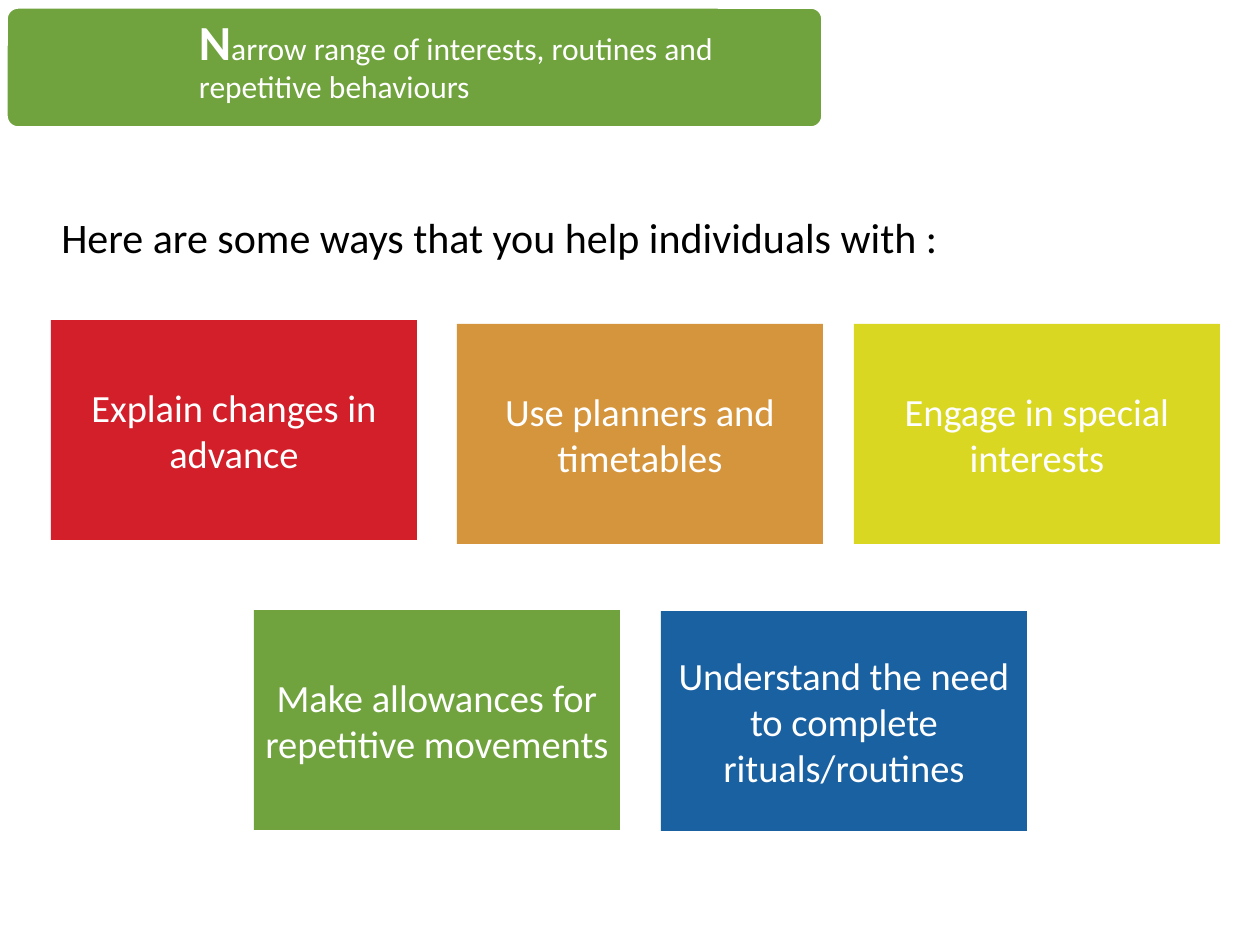
from pptx import Presentation
from pptx.dml.color import RGBColor
from pptx.enum.shapes import MSO_SHAPE
from pptx.enum.text import MSO_ANCHOR, PP_ALIGN
from pptx.util import Emu, Pt

RECT = MSO_SHAPE.RECTANGLE
ROUNDED = MSO_SHAPE.ROUNDED_RECTANGLE
MIDDLE = MSO_ANCHOR.MIDDLE
CENTER = PP_ALIGN.CENTER
PX = 914400 // 126  # 126 px to the inch
FONT = "Calibri"
COLORS = {
    "red": "D31F29",
    "orange": "D5953C",
    "yellow": "D9D721",
    "green": "70A33E",
    "blue": "1A61A2",
    "white": "FFFFFF",
    "black": "000000",
}


def box(lengths):
    return [Emu(n * PX) for n in lengths]


def style(run, size, color, bold=False):
    run.font.name = FONT
    run.font.size = Pt(size)
    run.font.bold = bold
    run.font.color.rgb = RGBColor.from_string(COLORS[color])


prs = Presentation()
prs.slide_width, prs.slide_height = box((1260, 945))
slide = prs.slides.add_slide(prs.slide_layouts[6])
shapes = slide.shapes

# Cards with the ways to help
CARD_W, CARD_H = 366, 220
cards = [
    (51, 320, "red", "Explain changes in advance"),
    (457, 324, "orange", "Use planners and timetables"),
    (854, 324, "yellow", "Engage in special interests"),
    (254, 610, "green", "Make allowances for repetitive movements"),
    (661, 611, "blue", "Understand the need to complete rituals/routines"),
]
for left, top, color, advice in cards:
    card = shapes.add_shape(RECT, *box((left, top, CARD_W, CARD_H)))
    card.shadow.inherit = False
    card.fill.solid()
    card.fill.fore_color.rgb = RGBColor.from_string(COLORS[color])
    card.line.fill.background()
    frame = card.text_frame
    frame.word_wrap = True
    frame.vertical_anchor = MIDDLE
    (frame.margin_left, frame.margin_top,
     frame.margin_right, frame.margin_bottom) = box((11, 11, 11, 11))
    frame.text = advice
    frame.paragraphs[0].alignment = CENTER
    style(frame.paragraphs[0].runs[0], 22, "white")

# Introduction line
intro = shapes.add_textbox(*box((49, 205, 1101, 63))).text_frame
intro.word_wrap = True
intro.text = "Here are some ways that you help individuals with :"
style(intro.paragraphs[0].runs[0], 24, "black")

# Banner
banner = shapes.add_shape(ROUNDED, *box((6, 7, 817, 121)))
banner.adjustments[0] = 0.1
banner.shadow.inherit = False
banner.fill.solid()
banner.fill.fore_color.rgb = RGBColor.from_string(COLORS["green"])
banner.line.color.rgb = RGBColor.from_string(COLORS["white"])
banner.line.width = Pt(2)

# Banner heading with a large initial
heading = shapes.add_textbox(*box((184, 6, 640, 112))).text_frame
heading.word_wrap = True
heading.vertical_anchor = MIDDLE
(heading.margin_left, heading.margin_top,
 heading.margin_right, heading.margin_bottom) = box((15, 15, 15, 15))
heading_line = heading.paragraphs[0]
heading_line.line_spacing = 0.9
for words, size, bold in [
    ("N", 28, True),
    ("arrow range of interests, routines and repetitive behaviours", 18, False),
]:
    run = heading_line.add_run()
    run.text = words
    style(run, size, "white", bold)

prs.save("out.pptx")
